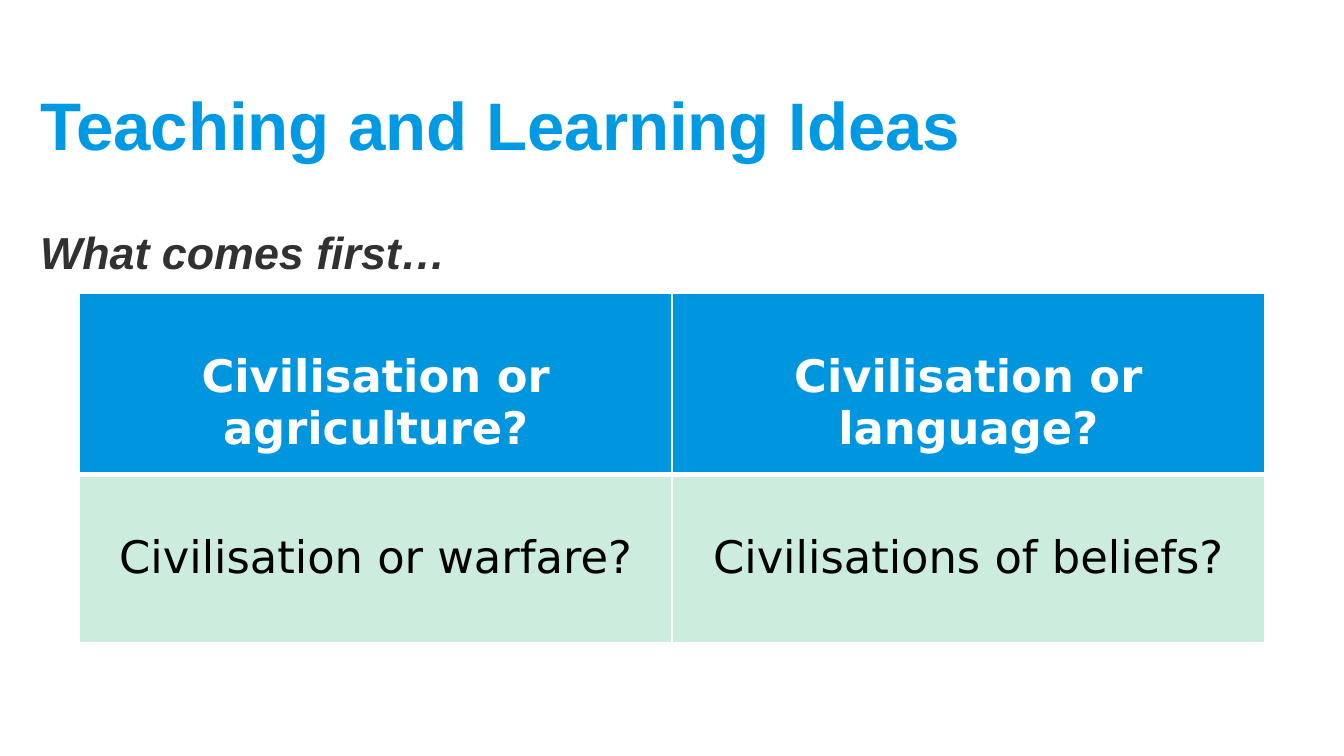
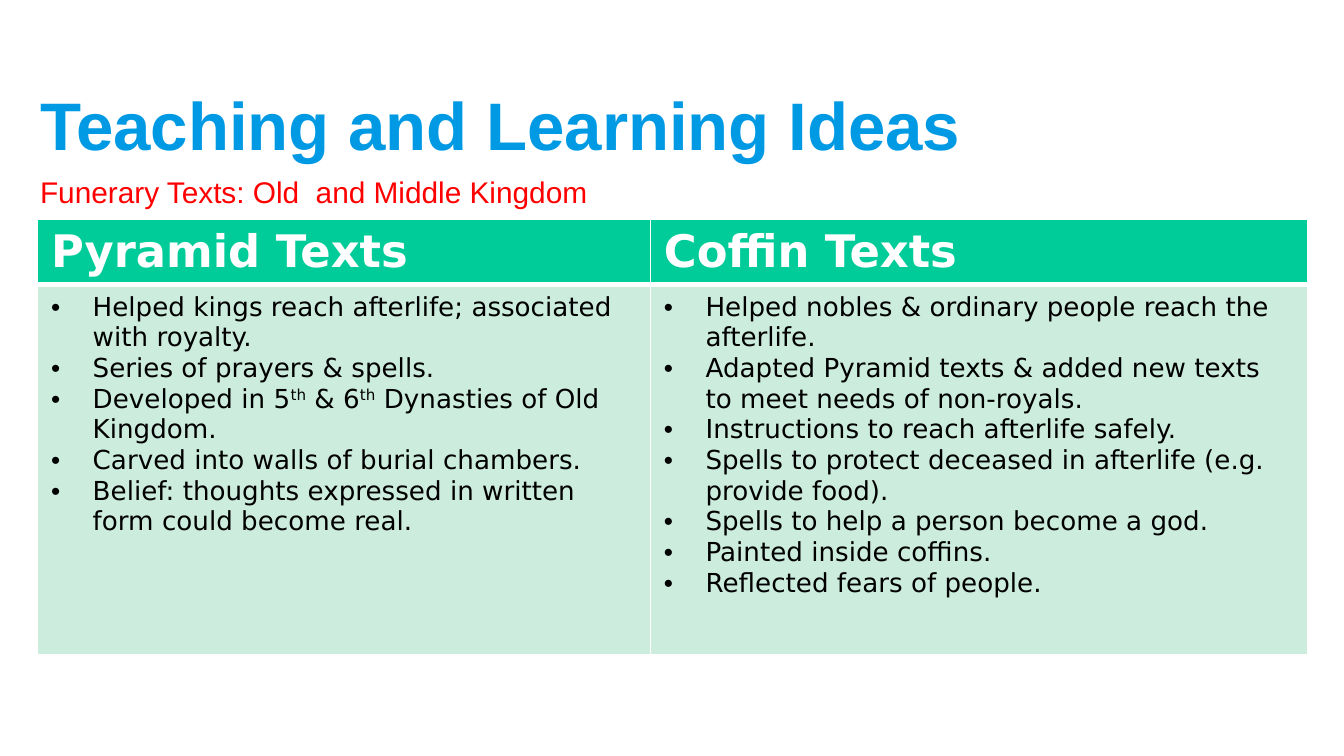
from pptx import Presentation
from pptx.dml.color import RGBColor
from pptx.enum.text import MSO_ANCHOR as Anchor, PP_ALIGN as Align
from pptx.oxml import parse_xml
from pptx.oxml.ns import nsdecls
from pptx.util import Inches, Pt

# Shared look
SLIDE_WIDTH = 10
TITLE_BLUE = RGBColor(0x00, 0x99, 0xE3)
HEADER_BLUE = RGBColor(0x00, 0x96, 0xDF)
HEADER_GREEN = RGBColor(0x00, 0xCC, 0x99)
PALE_GREEN = RGBColor(0xCC, 0xEC, 0xDE)
DARK_GREY = RGBColor(0x30, 0x31, 0x32)
RED = RGBColor(0xFF, 0x00, 0x00)
WHITE = RGBColor(0xFF, 0xFF, 0xFF)
BLACK = RGBColor(0x00, 0x00, 0x00)
TEXT_FONT = "Arial"
TABLE_FONT = "DejaVu Sans"
TEXT_LEFT, TEXT_WIDTH = 0.2, 9.53
CELL_PADDING = 0.05
BULLET_INDENT = 0.31

# Slide content
TITLE = "Teaching and Learning Ideas"
QUESTIONS = [
    ["Civilisation or agriculture?", "Civilisation or language?"],
    ["Civilisation or warfare?", "Civilisations of beliefs?"],
]
TEXT_HEADINGS = ["Pyramid Texts", "Coffin Texts"]
# A caret opens and closes superscript
PYRAMID_POINTS = [
    "Helped kings reach afterlife; associated with royalty.",
    "Series of prayers & spells.",
    "Developed in 5^th^ & 6^th^ Dynasties of Old Kingdom.",
    "Carved into walls of burial chambers.",
    "Belief: thoughts expressed in written form could become real.",
]
COFFIN_POINTS = [
    "Helped nobles & ordinary people reach the afterlife.",
    "Adapted Pyramid texts & added new texts to meet needs of non-royals.",
    "Instructions to reach afterlife safely.",
    "Spells to protect deceased in afterlife (e.g. provide food).",
    "Spells to help a person become a god.",
    "Painted inside coffins.",
    "Reflected fears of people.",
]


def add_bullet(paragraph):
    properties = paragraph._p.get_or_add_pPr()
    properties.set("marL", str(Inches(BULLET_INDENT)))
    properties.set("indent", str(-Inches(BULLET_INDENT)))
    properties.append(parse_xml(f'<a:buFont {nsdecls("a")} typeface="Arial"/>'))
    properties.append(parse_xml(f'<a:buChar {nsdecls("a")} char="•"/>'))


def write_text(frame, text, *, size, color, font=TEXT_FONT, bold=False,
               italic=False, align=Align.LEFT, bullets=False):
    """Write a string, or a list with one string per paragraph."""
    lines = [text] if isinstance(text, str) else text
    for index, line in enumerate(lines):
        paragraph = frame.add_paragraph() if index else frame.paragraphs[0]
        paragraph.alignment = align
        if bullets:
            add_bullet(paragraph)
        for position, part in enumerate(line.split("^")):
            run = paragraph.add_run()
            run.text = part
            run.font.name = font
            run.font.size = Pt(size)
            run.font.bold = bold
            run.font.italic = italic
            run.font.color.rgb = color
            if position % 2:
                run._r.get_or_add_rPr().set("baseline", "30000")


def add_text(slide, text, top, height, *, anchor=Anchor.TOP, **style):
    box = slide.shapes.add_textbox(
        Inches(TEXT_LEFT), Inches(top), Inches(TEXT_WIDTH), Inches(height))
    frame = box.text_frame
    frame.word_wrap = True
    frame.vertical_anchor = anchor
    write_text(frame, text, **style)


def add_titled_slide(presentation):
    slide = presentation.slides.add_slide(presentation.slide_layouts[6])
    add_text(slide, TITLE, 0.45, 0.94, anchor=Anchor.MIDDLE,
             size=36, color=TITLE_BLUE, bold=True)
    return slide


def add_table(slide, left, top, columns, rows):
    shape = slide.shapes.add_table(
        len(rows), len(columns), Inches(left), Inches(top),
        Inches(sum(columns)), Inches(sum(rows)))
    table = shape.table
    table.horz_banding = False
    for column, width in zip(table.columns, columns):
        column.width = Inches(width)
    for row, height in zip(table.rows, rows):
        row.height = Inches(height)
    return table


def add_borders(cell, **widths):
    """White borders, 1 pt unless a side (L, R, T, B) is given its own width."""
    properties = cell._tc.get_or_add_tcPr()
    for side in "LRTB":
        properties.append(parse_xml(
            f'<a:ln{side} {nsdecls("a")} w="{Pt(widths.get(side, 1))}">'
            f'<a:solidFill><a:srgbClr val="{WHITE}"/></a:solidFill></a:ln{side}>'))


def fill_cell(cell, text, fill, borders, *, top=CELL_PADDING,
              bottom=CELL_PADDING, **style):
    add_borders(cell, **borders)
    cell.fill.solid()
    cell.fill.fore_color.rgb = fill
    cell.margin_top = Inches(top)
    cell.margin_bottom = Inches(bottom)
    write_text(cell.text_frame, text, font=TABLE_FONT, **style)


def fill_header(table, headings, fill, **style):
    for column, heading in enumerate(headings):
        fill_cell(table.cell(0, column), heading, fill, {"B": 3},
                  size=24, color=WHITE, bold=True, **style)


def fill_body(table, contents, **style):
    for column, content in enumerate(contents):
        fill_cell(table.cell(1, column), content, PALE_GREEN, {"T": 3},
                  color=BLACK, **style)


def build_questions(presentation):
    slide = add_titled_slide(presentation)
    add_text(slide, "What comes first…", 1.62, 3.25,
             size=24, color=DARK_GREY, bold=True, italic=True)
    table = add_table(slide, 0.59, 2.18, [4.41, 4.41], [1.35, 1.25])
    layout = {"align": Align.CENTER, "top": 0.43}
    fill_header(table, QUESTIONS[0], HEADER_BLUE, **layout)
    fill_body(table, QUESTIONS[1], size=24, **layout)


def build_funerary_texts(presentation):
    slide = add_titled_slide(presentation)
    add_text(slide, "Funerary Texts: Old  and Middle Kingdom", 1.24, 3.64,
             size=16, color=RED)
    table = add_table(slide, 0.28, 1.63, [4.56, 4.89], [0.37, 2.59])
    fill_header(table, TEXT_HEADINGS, HEADER_GREEN, bottom=0.04)
    fill_body(table, [PYRAMID_POINTS, COFFIN_POINTS], size=14,
              bullets=True, bottom=0.37)


def main():
    presentation = Presentation()
    presentation.slide_width = Inches(SLIDE_WIDTH)
    presentation.slide_height = Inches(SLIDE_WIDTH * 9 / 16)
    build_questions(presentation)
    build_funerary_texts(presentation)
    presentation.save("out.pptx")


if __name__ == "__main__":
    main()
